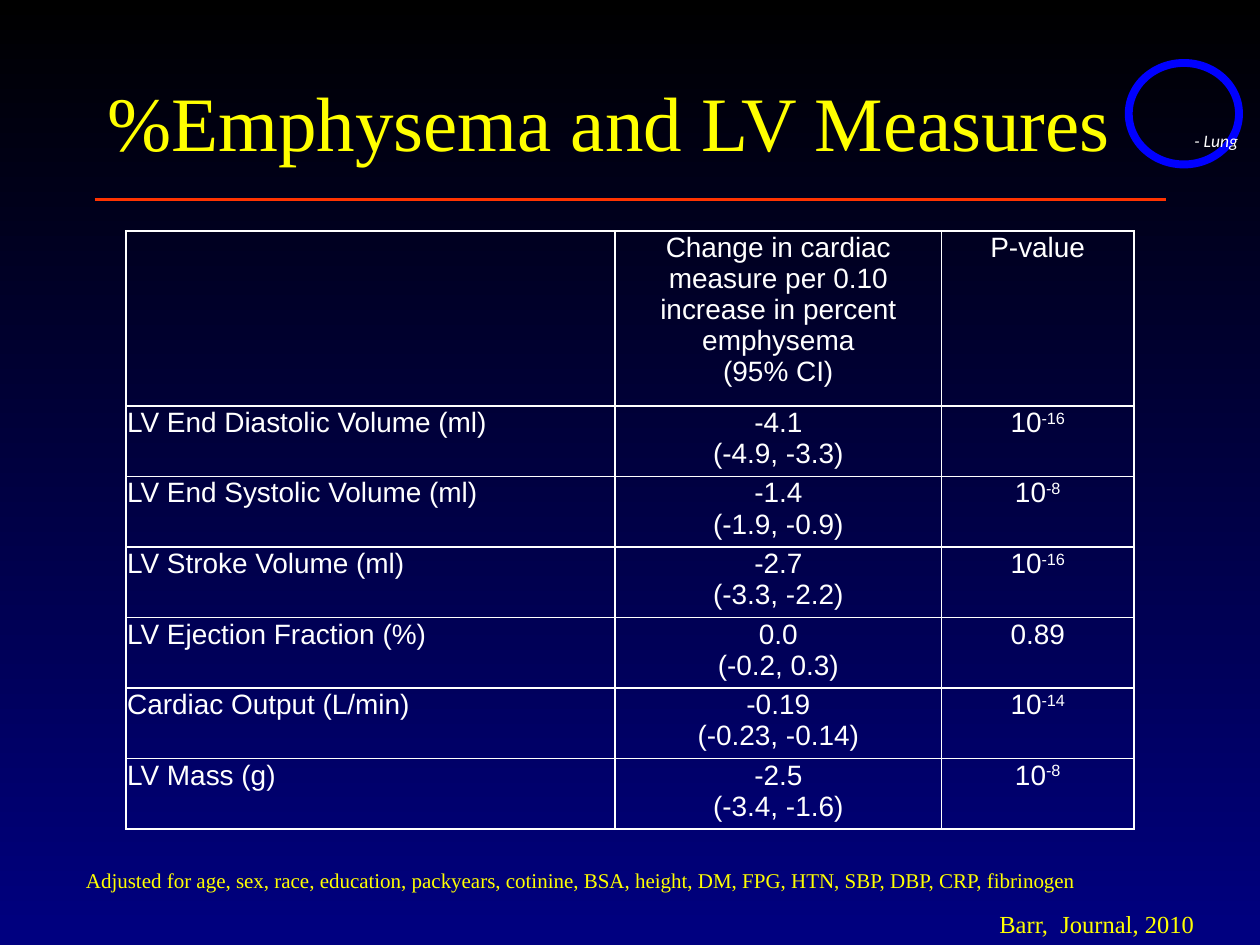
from lxml.etree import SubElement
from pptx import Presentation
from pptx.dml.color import RGBColor
from pptx.enum.shapes import MSO_CONNECTOR, MSO_SHAPE
from pptx.enum.text import MSO_ANCHOR, MSO_AUTO_SIZE, PP_ALIGN
from pptx.oxml import parse_xml
from pptx.oxml.ns import nsdecls, qn
from pptx.util import Pt

BLACK = RGBColor(0x00, 0x00, 0x00)
NAVY = RGBColor(0x00, 0x00, 0x80)
BLUE = RGBColor(0x00, 0x00, 0xFF)
YELLOW = RGBColor(0xFF, 0xFF, 0x00)
WHITE = RGBColor(0xFF, 0xFF, 0xFF)
ORANGE = RGBColor(0xFF, 0x33, 0x00)
SERIF = "Times New Roman"

# A caret marks the start of a superscript, a line break a new paragraph
HEADER = [
    "",
    "Change in cardiac measure per 0.10 increase in percent emphysema\n(95% CI)",
    "P-value",
]
MEASURES = [
    ("LV End Diastolic Volume (ml)", "-4.1\n(-4.9, -3.3)", "10^-16"),
    ("LV End Systolic Volume (ml)", "-1.4\n(-1.9, -0.9)", "10^-8"),
    ("LV Stroke Volume (ml)", "-2.7\n(-3.3, -2.2)", "10^-16"),
    ("LV Ejection Fraction (%)", "0.0\n(-0.2, 0.3)", "0.89"),
    ("Cardiac Output (L/min)", "-0.19\n(-0.23, -0.14)", "10^-14"),
    ("LV Mass (g)", "-2.5\n(-3.4, -1.6)", "10^-8"),
]


def write_text(frame, text, size, color, font=SERIF, align=PP_ALIGN.LEFT, italic=False):
    for number, line in enumerate(text.split("\n")):
        paragraph = frame.add_paragraph() if number else frame.paragraphs[0]
        paragraph.alignment = align
        paragraph.font.size = Pt(size)
        for level, part in enumerate(line.split("^")):
            run = paragraph.add_run()
            run.text = part
            run.font.size = Pt(size)
            run.font.name = font
            run.font.italic = italic
            run.font.color.rgb = color
            if level:
                run.font._element.set("baseline", "30000")


def add_text_box(slide, box, text, wrap=True, **text_format):
    shape = slide.shapes.add_textbox(*map(Pt, box))
    shape.text_frame.word_wrap = wrap
    write_text(shape.text_frame, text, **text_format)


def add_title(slide, box):
    left, top, width, height = box
    title = slide.shapes.title
    title.left, title.top, title.width, title.height = map(Pt, box)
    title.text_frame.auto_size = MSO_AUTO_SIZE.NONE
    title.text_frame.vertical_anchor = MSO_ANCHOR.MIDDLE
    write_text(title.text_frame, "%Emphysema and LV Measures", size=44, color=YELLOW)

    # Rule along the lower edge of the title
    bottom = Pt(top + height)
    rule = slide.shapes.add_connector(
        MSO_CONNECTOR.STRAIGHT, Pt(left), bottom, Pt(left + width), bottom)
    rule.line.color.rgb = ORANGE
    rule.line.width = Pt(2)
    SubElement(rule._element.spPr, qn("a:effectLst"))


def set_borders(cell, color, width):
    properties = cell._tc.get_or_add_tcPr()
    for index, side in enumerate(("lnL", "lnR", "lnT", "lnB")):
        properties.insert(index, parse_xml(
            f'<a:{side} {nsdecls("a")} w="{Pt(width)}"><a:solidFill>'
            f'<a:srgbClr val="{color}"/></a:solidFill></a:{side}>'))


def add_measures_table(slide, box):
    left, top, width, height = box
    rows = [HEADER, *MEASURES]
    shape = slide.shapes.add_table(len(rows), len(HEADER), *map(Pt, box))
    table = shape.table
    table.first_row = table.horz_banding = False

    # The header takes 100 pt, the measures share the rest equally
    header_height = 100
    row_height = (height - header_height) / len(MEASURES)
    for index, row in enumerate(table.rows):
        row.height = Pt(row_height if index else header_height)
    middle_width, last_width = 186.5, 110
    widths = (width - middle_width - last_width, middle_width, last_width)
    for column, column_width in zip(table.columns, widths):
        column.width = Pt(column_width)

    for row_index, row in enumerate(rows):
        for column_index, text in enumerate(row):
            cell = table.cell(row_index, column_index)
            cell.margin_left = cell.margin_right = cell.margin_top = Pt(0.72)
            cell.margin_bottom = 0
            cell.fill.background()
            set_borders(cell, WHITE, 1)
            if text:
                align = PP_ALIGN.CENTER if column_index else PP_ALIGN.LEFT
                write_text(cell.text_frame, text, size=16, color=WHITE,
                           font="Arial", align=align)


def add_study_mark(slide, box):
    left, top, width, height = box
    mark = slide.shapes.add_shape(MSO_SHAPE.OVAL, *map(Pt, box))
    mark.shadow.inherit = False
    mark.fill.background()
    mark.line.color.rgb = BLUE
    mark.line.width = Pt(4.5)
    add_text_box(slide, (left + 30.5, top + 35, 44, 18), "- Lung", size=10,
                 color=WHITE, font="Calibri", italic=True)


def add_footer(slide, box):
    left, top, width, height = box
    add_text_box(
        slide, (left, top, width, 22),
        "Adjusted for age, sex, race, education, packyears, cotinine, BSA, height, "
        "DM, FPG, HTN, SBP, DBP, CRP, fibrinogen",
        size=12, color=YELLOW)
    add_text_box(slide, (left + 522, top + height - 24, 130, 24), "Barr,  Journal, 2010",
                 wrap=False, size=14, color=YELLOW)


def main():
    presentation = Presentation()
    presentation.slide_width, presentation.slide_height = Pt(720), Pt(540)
    slide = presentation.slides.add_slide(presentation.slide_layouts[5])

    # Background fades from black at the top to navy at the bottom
    background = slide.background.fill
    background.gradient()
    background.gradient_angle = 270
    for stop, color in zip(background.gradient_stops, (BLACK, NAVY)):
        stop.color.rgb = color

    add_title(slide, (54, 24, 612, 90))
    add_measures_table(slide, (72, 132, 576, 342))
    add_study_mark(slide, (645, 36, 63, 58))
    add_footer(slide, (42, 492, 660, 48))
    presentation.save("out.pptx")


if __name__ == "__main__":
    main()
